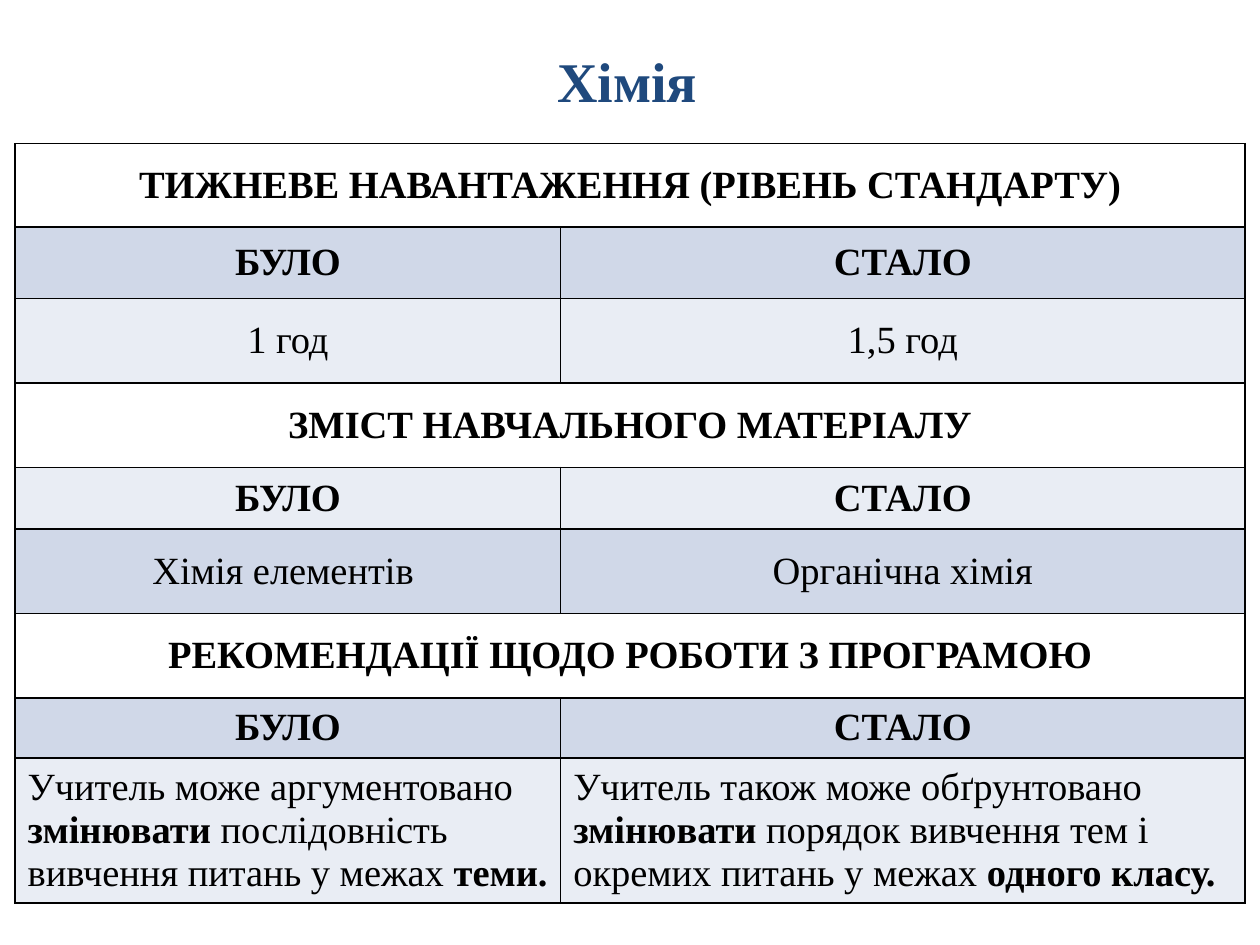
import pptx
import pptx.util
import pptx.dml.color
import pptx.enum.text
import pptx.oxml
import pptx.oxml.ns

ALIGN = pptx.enum.text.PP_ALIGN
MIDDLE = pptx.enum.text.MSO_ANCHOR.MIDDLE
DARK, LIGHT = "D0D8E8", "E9EDF4"
WAS, NOW = "*БУЛО*", "*СТАЛО*"
COLS = (43.3, 54.3)
ROWS = (
    (8.8, None, ("*ТИЖНЕВЕ НАВАНТАЖЕННЯ (РІВЕНЬ СТАНДАРТУ)*",)),
    (7.6, DARK, (WAS, NOW)),
    (8.93, LIGHT, ("1 год", "1,5 год")),
    (8.93, None, ("*ЗМІСТ НАВЧАЛЬНОГО МАТЕРІАЛУ*",)),
    (6.53, LIGHT, (WAS, NOW)),
    (8.93, DARK, ("Хімія елементів ", "Органічна хімія")),
    (8.93, None, ("*РЕКОМЕНДАЦІЇ ЩОДО РОБОТИ З ПРОГРАМОЮ*",)),
    (6.4, DARK, (WAS, NOW)),
    (15.33, LIGHT, (
        "Учитель може аргументовано *змінювати *послідовність вивчення питань у межах *теми.*",
        "Учитель також може обґрунтовано *змінювати *порядок вивчення тем і окремих питань у межах *одного класу.*",
    )),
)


def tint(code):
    return pptx.dml.color.RGBColor.from_string(code)


def apply(item, form):
    for name, value in form.items():
        setattr(item, name, value)


class Deck:
    """Holds the style and the current slide; lengths are percentages of the slide."""

    font = "Times New Roman"

    def __init__(self, wide, high):
        self.show = pptx.Presentation()
        apply(self.show, {"slide_width": pptx.util.Inches(wide),
                          "slide_height": pptx.util.Inches(high)})
        self.slide = self.show.slides.add_slide(self.show.slide_layouts[5])

    def across(self, share):
        return round(self.show.slide_width * share / 100)

    def down(self, share):
        return round(self.show.slide_height * share / 100)

    def box(self, left, top, width, height):
        return {"left": self.across(left), "top": self.down(top),
                "width": self.across(width), "height": self.down(height)}

    def label(self, para, text, size, color):
        for index, part in enumerate(text.split("*")):
            if part:
                run = para.add_run()
                run.text = part
                apply(run.font, {"name": self.font, "size": pptx.util.Pt(size),
                                 "bold": index % 2 == 1})
                run.font.color.rgb = tint(color)

    def title(self, text, place, size, color):
        shape = self.slide.shapes.title
        apply(shape, self.box(*place))
        apply(shape.text_frame, {"vertical_anchor": MIDDLE, "word_wrap": True})
        para = shape.text_frame.paragraphs[0]
        apply(para, {"alignment": ALIGN.CENTER, "line_spacing": 0.5})
        self.label(para, text, size, color)

    def border(self, cell, color, width):
        props = cell._tc.get_or_add_tcPr()
        for side in "LRTB":
            props.append(pptx.oxml.parse_xml(
                f'<a:ln{side} {pptx.oxml.ns.nsdecls("a")} w="{pptx.util.Pt(width)}">'
                f'<a:solidFill><a:srgbClr val="{color}"/></a:solidFill></a:ln{side}>'))

    def table(self, left, top, cols, rows, size, color):
        place = self.box(left, top, sum(cols), sum(row[0] for row in rows))
        grid = self.slide.shapes.add_table(len(rows), len(cols), **place).table
        apply(grid, {"first_row": False, "horz_banding": False})
        for col, width in zip(grid.columns, cols):
            col.width = self.across(width)
        for index, (height, fill, texts) in enumerate(rows):
            row = grid.rows[index]
            row.height = self.down(height)
            for cell in row.cells:
                self.border(cell, color, 1)
                if fill:
                    cell.fill.solid()
                    cell.fill.fore_color.rgb = tint(fill)
                else:
                    cell.fill.background()
            if len(texts) == 1:
                grid.cell(index, 0).merge(grid.cell(index, len(cols) - 1))
            last = index == len(rows) - 1
            for cell, text in zip(row.cells, texts):
                cell.vertical_anchor = MIDDLE
                para = cell.text_frame.paragraphs[0]
                para.alignment = ALIGN.LEFT if last else ALIGN.CENTER
                self.label(para, text, size, color)


def main():
    deck = Deck(10, 7.5)
    deck.title("*Хімія*", (4.9, 5.73, 89.8, 8.13), 32, "1F497D")
    deck.table(1.2, 15.2, COLS, ROWS, 22, "000000")
    deck.show.save("out.pptx")


if __name__ == "__main__":
    main()
